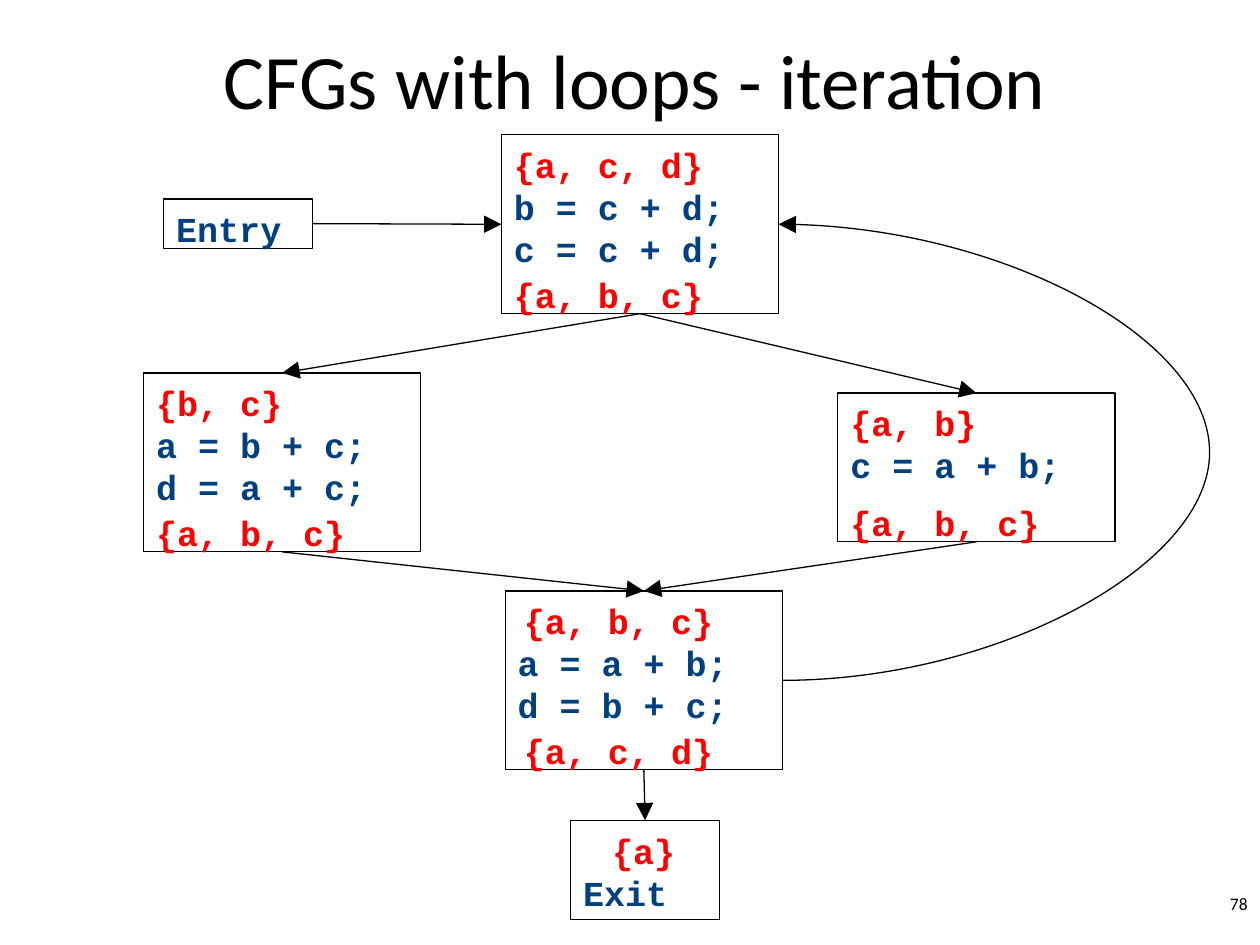
"""Build a slide showing liveness iteration on a control flow graph with a loop."""
from lxml import etree
from pptx import Presentation
from pptx.dml.color import RGBColor
from pptx.enum import shapes, text
from pptx.oxml.ns import qn
from pptx.util import Inches, Pt

COLORS = {"ink": "000000", "code": "004080", "live": "FF0000"}
TITLE = "CFGs with loops - iteration"
PAGE = "78"
LINE, TOP, LABEL_H = 24, 0.07, 0.39

BLOCKS = {
    "exit": ((4.53, 6.51, 1.18, 0.79), "Exit"),
    "merge": ((4.01, 4.69, 2.2, 1.42), "a = a + b;\vd = b + c;"),
    "right": ((6.65, 3.12, 2.2, 1.18), "c = a + b;"),
    "left": ((1.14, 2.96, 2.2, 1.42), "a = b + c;\vd = a + c;"),
    "head": ((3.98, 1.07, 2.2, 1.42), "b = c + d;\vc = c + d;"),
    "entry": ((1.3, 1.58, 1.18, LABEL_H), "Entry"),
}
LIVE = {
    "exit": ("{a}", None, 0.23),
    "right": ("{a, b}", "{a, b, c}", 0),
    "left": ("{b, c}", "{a, b, c}", 0),
    "head": ("{a, c, d}", "{a, b, c}", 0),
    "merge": ("{a, b, c}", "{a, c, d}", 0.05),
}
EDGES = [
    ("head", "bottom", "left", "top"),
    ("head", "bottom", "right", "top"),
    ("left", "bottom", "merge", "top"),
    ("right", "bottom", "merge", "top"),
    ("merge", "bottom", "exit", "top"),
    ("entry", "right", "head", "left"),
]
LOOP = ("merge", "right", "head", "right")
LOOP_REACH = 9.61


def color(name):
    return RGBColor.from_string(COLORS[name])


def write(sp, content, size, font, ink, bold=False, align=text.PP_ALIGN.LEFT):
    tf = sp.text_frame
    tf.word_wrap = True
    p = tf.paragraphs[0]
    p.text = content
    p.alignment = align
    p.font.size, p.font.name, p.font.bold = Pt(size), font, bold
    p.font.color.rgb = color(ink)
    return tf


def write_code(sp, content, ink, top=TOP):
    tf = write(sp, content, 20, "Courier New", ink, bold=True)
    tf.vertical_anchor = text.MSO_ANCHOR.TOP
    tf.margin_top = Inches(top)
    tf.paragraphs[0].line_spacing = Pt(LINE)


def add_text(s, box):
    return s.shapes.add_textbox(*map(Inches, box))


def add_block(s, box, code, has_live):
    sp = s.shapes.add_shape(shapes.MSO_SHAPE.RECTANGLE, *map(Inches, box))
    sp.shadow.inherit = False
    sp.fill.background()
    sp.line.color.rgb, sp.line.width = color("ink"), Pt(0.75)
    write_code(sp, code, "code", TOP + has_live * LINE / 72)


def add_live(s, name):
    before, after, indent = LIVE[name]
    x, y, w, h = BLOCKS[name][0]
    width = w if after else w - 0.39
    for content, top in ((before, y), (after, y + h - LABEL_H)):
        if content:
            write_code(add_text(s, (x + indent, top, width, LABEL_H)), content, "live")


def port(name, side):
    x, y, w, h = BLOCKS[name][0]
    fx, fy = {"top": (0.5, 0), "bottom": (0.5, 1),
              "left": (0, 0.5), "right": (1, 0.5)}[side]
    return x + w * fx, y + h * fy


def add_arrow(s, edge, kind=shapes.MSO_CONNECTOR.STRAIGHT):
    ends = port(*edge[:2]) + port(*edge[2:])
    cxn = s.shapes.add_connector(kind, *map(Inches, ends))
    cxn.line.color.rgb, cxn.line.width = color("ink"), Pt(0.75)
    etree.SubElement(cxn.line._get_or_add_ln(), qn("a:tailEnd"),
                     type="triangle", w="lg", len="lg")
    etree.SubElement(cxn._element.spPr, qn("a:effectLst"))
    return cxn


def add_loop(s):
    cxn = add_arrow(s, LOOP, shapes.MSO_CONNECTOR.CURVE)
    reach = Inches(LOOP_REACH) - cxn.begin_x
    ratio = reach / (cxn.end_x - cxn.begin_x)
    guides = cxn._element.spPr.find(qn("a:prstGeom")).find(qn("a:avLst"))
    etree.SubElement(guides, qn("a:gd"), name="adj1",
                     fmla=f"val {round(ratio * 100000)}")


def main():
    prs = Presentation()
    prs.slide_width, prs.slide_height = Inches(10), Inches(7.5)
    s = prs.slides.add_slide(prs.slide_layouts[6])
    title = write(add_text(s, (0.79, 0, 8.5, 1.25)), TITLE, 44, "Calibri", "ink",
                  align=text.PP_ALIGN.CENTER)
    title.vertical_anchor = text.MSO_ANCHOR.MIDDLE
    write(add_text(s, (7.92, 7.04, 2.08, 0.3)), PAGE, 10, "Calibri", "ink",
          align=text.PP_ALIGN.RIGHT)
    for name, (box, code) in BLOCKS.items():
        add_block(s, box, code, name in LIVE)
    for edge in EDGES:
        add_arrow(s, edge)
    add_loop(s)
    for name in LIVE:
        add_live(s, name)
    prs.save("out.pptx")


if __name__ == "__main__":
    main()
